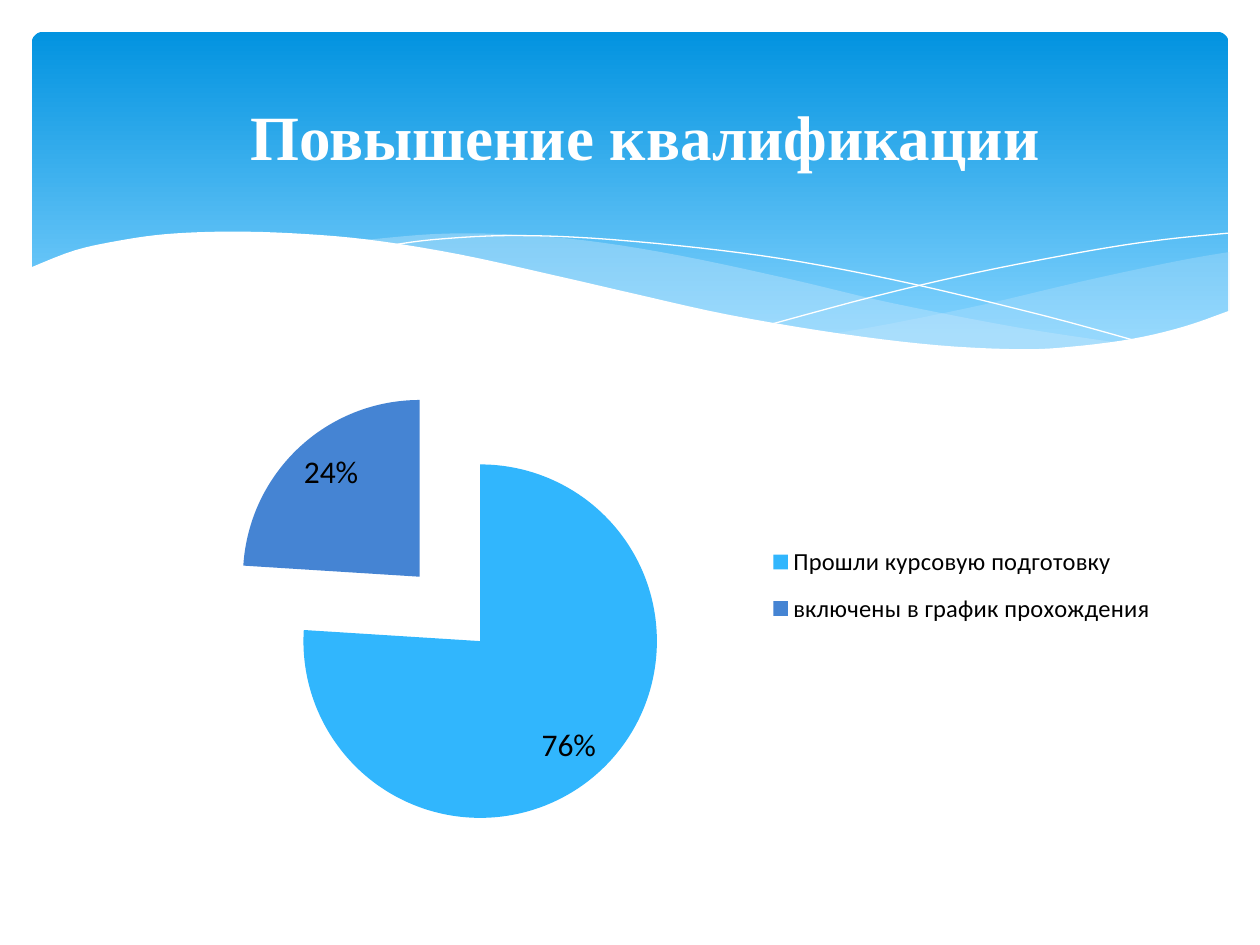
from lxml import etree
from pptx import Presentation
from pptx import util as u
from pptx.chart.data import CategoryChartData
from pptx.dml.color import RGBColor
from pptx.enum import chart as charts, shapes, text
from pptx.oxml.ns import qn

THEME = {
    "white": "FFFFFF", "black": "000000", "veil": "C6E7FC",
    "banner": ((0, "0293E0"), (0.9, "83D3FE")),
    "slices": ("31B6FD", "4584D3"),
    "title_font": "Times New Roman", "chart_font": "Calibri",
    "title_size": 36, "label_size": 18, "legend_size": 14,
}

TITLE = "Повышение квалификации"
SHARES = {"Прошли курсовую подготовку": 0.76, "включены в график прохождения": 0.24}

SLIDE_SIZE = (25.4, 19.05)
BANNER_BOX = (0.64, 0.64, 24.13, 6.86)
TITLE_BOX = (3.71, 1.73, 18.59, 2.01)
CHART_BOX = (2.41, 7.44, 21.49, 9.58)
PIE_LAYOUT = {"x": 0.1, "y": 0.04, "w": 0.42, "h": 0.93}
LEGEND_LAYOUT = {"x": 0.6, "y": 0.34, "w": 0.38, "h": 0.23}

WAVES = [
    {"fill": "veil", "opacity": 29, "curves": [
        [(24.79, 5.08), (23.75, 5.26), (21.87, 5.66), (19.79, 6.15), (17.93, 6.53), (16.79, 6.73)],
        [(16.79, 6.73), (18.26, 6.91), (19.53, 7.04), (20.68, 7.06), (22.15, 6.96),
         (23.39, 6.73), (24.1, 6.53), (24.79, 6.27)]]},
    {"fill": "veil", "opacity": 40, "curves": [
        [(22.68, 6.93), (20.5, 6.6), (17.93, 6.1), (15.98, 5.64), (13.74, 5.16),
         (11.81, 4.85), (10.13, 4.72), (8.74, 4.72), (7.26, 4.85)],
        [(7.26, 4.85), (9.19, 5.16), (11.4, 5.64), (13.46, 6.1), (15.7, 6.55),
         (17.65, 6.86), (19.33, 7.04), (20.78, 7.06), (21.77, 7.04), (22.68, 6.93)]]},
    {"line": "white", "curves": [
        [(7.85, 4.95), (8.74, 4.83), (10.19, 4.75), (11.91, 4.8), (14.12, 5), (16.15, 5.28),
         (18.47, 5.74), (21.11, 6.38), (23.04, 6.91)]]},
    {"line": "white", "curves": [
        [(15.57, 6.53), (17.65, 5.97), (19.71, 5.49), (22, 5.05), (23.47, 4.83), (24.77, 4.7)]]},
    {"fill": "white", "curves": [
        [(24.82, 6.25), (23.88, 6.58), (22.83, 6.83), (21.59, 6.99), (20.55, 7.04), (18.9, 6.96),
         (16.97, 6.73), (14.71, 6.35), (12.78, 5.92), (11.35, 5.59), (9.27, 5.13), (7.42, 4.83),
         (5.84, 4.7), (4.5, 4.67), (3.35, 4.72), (2.41, 4.85), (1.5, 5.05), (0.58, 5.41)],
        [(0.58, 8.36), (24.82, 8.36)]]},
]


def color(value):
    return RGBColor.from_string(value)


def lengths(values):
    return [u.Cm(value) for value in values]


def smooth(points, steps=5):
    padded = [points[0], *points, points[-1]]
    result = [points[0]]
    for a, b, c, d in zip(padded, padded[1:], padded[2:], padded[3:]):
        for step in range(1, steps + 1):
            t = step / steps
            result.append(tuple(
                (2 * q + (r - p) * t + (2 * p - 5 * q + 4 * r - s) * t ** 2
                 + (3 * q - p - 3 * r + s) * t ** 3) / 2
                for p, q, r, s in zip(a, b, c, d)))
    return result


def add_banner(slide):
    shape = slide.shapes.add_shape(shapes.MSO_SHAPE.ROUNDED_RECTANGLE, *lengths(BANNER_BOX))
    shape.adjustments[0] = 0.034
    shape.shadow.inherit = False
    shape.line.fill.background()
    shape.fill.gradient()
    shape.fill.gradient_angle = 270
    for stop, (position, value) in zip(shape.fill.gradient_stops, THEME["banner"]):
        stop.position = position
        stop.color.rgb = color(value)


def add_wave(slide, curves, fill=None, line=None, opacity=None):
    points = [tuple(lengths(point)) for curve in curves
              for point in (smooth(curve) if len(curve) > 2 else curve)]
    builder = slide.shapes.build_freeform(*points[0])
    builder.add_line_segments(points[1:], close=fill is not None)
    shape = builder.convert_to_shape()
    shape.shadow.inherit = False
    if fill:
        shape.fill.solid()
        shape.fill.fore_color.rgb = color(THEME[fill])
        shape.line.fill.background()
    else:
        shape.fill.background()
        shape.line.color.rgb = color(THEME[line])
        shape.line.width = u.Pt(0)
    if opacity:
        value = next(shape.element.iter(qn("a:srgbClr")))
        etree.SubElement(value, qn("a:alpha"), val=str(opacity * 1000))


def style_font(font, name, size, value, bold=False):
    font.name = name
    font.size = u.Pt(size)
    font.color.rgb = color(value)
    font.bold = bold


def add_text(slide, content, *, box, font, size, value, bold=False):
    frame = slide.shapes.add_textbox(*lengths(box)).text_frame
    frame.word_wrap = True
    frame.vertical_anchor = text.MSO_ANCHOR.MIDDLE
    paragraph = frame.paragraphs[0]
    paragraph.alignment = text.PP_ALIGN.CENTER
    run = paragraph.add_run()
    run.text = content
    style_font(run.font, font, size, value, bold)


def set_layout(parent, place, inner=False):
    for old in parent.findall(qn("c:layout")):
        parent.remove(old)
    layout = etree.Element(qn("c:layout"))
    manual = etree.SubElement(layout, qn("c:manualLayout"))
    if inner:
        etree.SubElement(manual, qn("c:layoutTarget"), val="inner")
    for axis in "xy":
        etree.SubElement(manual, qn(f"c:{axis}Mode"), val="edge")
    for key, value in place.items():
        etree.SubElement(manual, qn(f"c:{key}"), val=str(value))
    position = parent.find(qn("c:legendPos"))
    parent.insert(0 if position is None else parent.index(position) + 1, layout)


def add_pie(slide):
    data = CategoryChartData(number_format="0%")
    data.categories = list(SHARES)
    data.add_series("Series 1", list(SHARES.values()))
    chart = slide.shapes.add_chart(charts.XL_CHART_TYPE.PIE, *lengths(CHART_BOX), data).chart
    chart.has_title = False
    style_font(chart.font, THEME["chart_font"], THEME["label_size"], THEME["black"])

    chart.has_legend = True
    chart.legend.position = charts.XL_LEGEND_POSITION.RIGHT
    chart.legend.include_in_layout = False
    style_font(chart.legend.font, THEME["chart_font"], THEME["legend_size"], THEME["black"])

    plot = chart.plots[0]
    plot.vary_by_categories = True
    plot.has_data_labels = True
    labels = plot.data_labels
    labels.show_value = True
    labels.show_percentage = False
    labels.number_format = "0%"
    labels.number_format_is_linked = False
    labels.position = charts.XL_LABEL_POSITION.INSIDE_END
    style_font(labels.font, THEME["chart_font"], THEME["label_size"], THEME["black"])

    series = plot.series[0]
    for index, value in enumerate(THEME["slices"]):
        fill = series.points[index].format.fill
        fill.solid()
        fill.fore_color.rgb = color(value)
    explosion = etree.Element(qn("c:explosion"), val="25")
    series._element.find(qn("c:dPt")).addprevious(explosion)
    set_layout(plot._element.getparent(), PIE_LAYOUT, inner=True)
    set_layout(chart.legend._element, LEGEND_LAYOUT)


def main():
    presentation = Presentation()
    presentation.slide_width, presentation.slide_height = lengths(SLIDE_SIZE)
    slide = presentation.slides.add_slide(presentation.slide_layouts[6])
    add_banner(slide)
    for wave in WAVES:
        add_wave(slide, **wave)
    add_pie(slide)
    add_text(slide, TITLE, box=TITLE_BOX, font=THEME["title_font"],
             size=THEME["title_size"], value=THEME["white"], bold=True)
    presentation.save("out.pptx")


if __name__ == "__main__":
    main()
